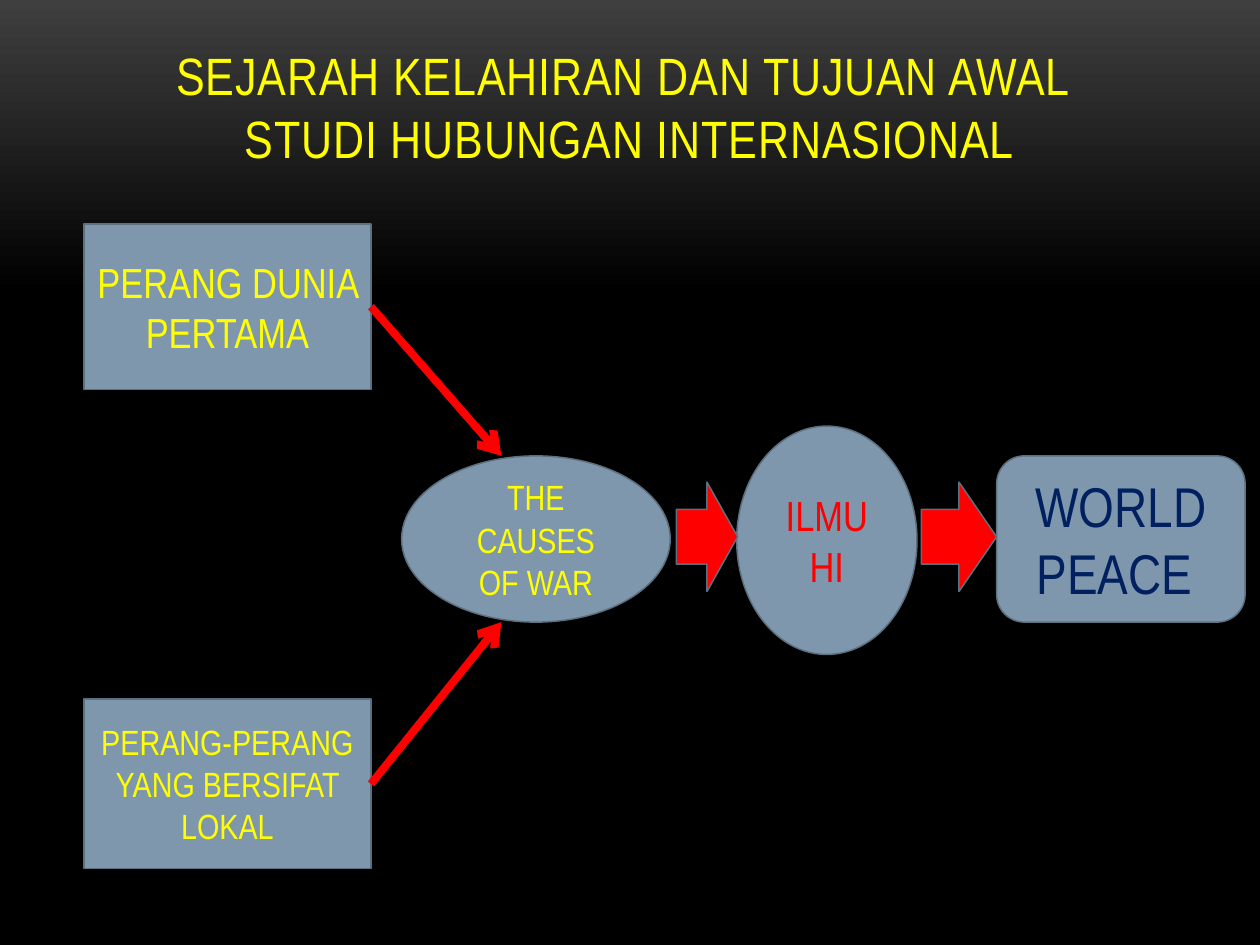
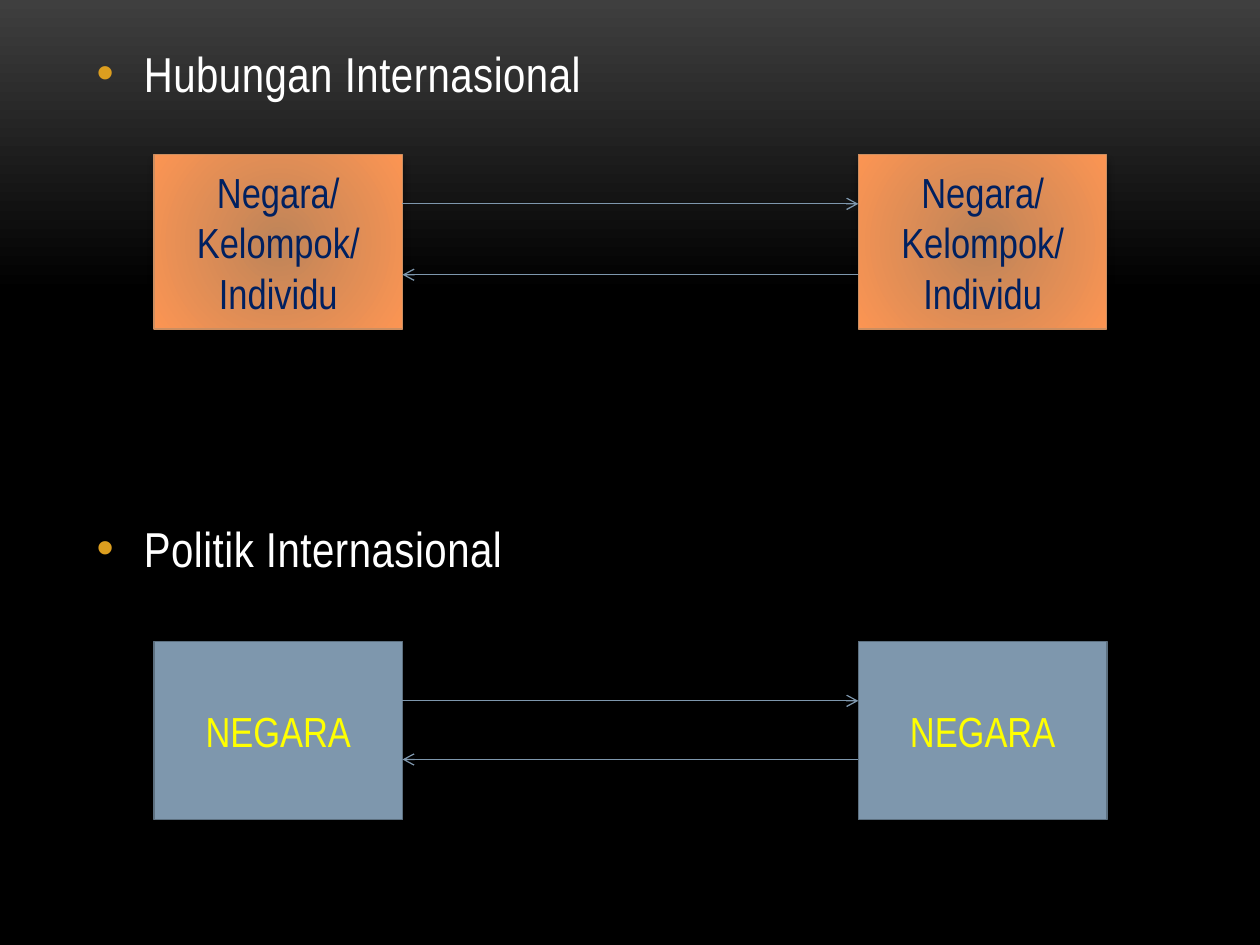
from lxml import etree
from pptx import Presentation
from pptx.dml.color import RGBColor
from pptx.enum import shapes, text
from pptx.oxml import ns
from pptx.util import Pt

FACE = "Arial Narrow"
YELLOW, NAVY, RED, WHITE = "FFFF00", "002060", "FF0000", "FFFFFF"
STEEL, EDGE, GOLD = "7E97AD", "5D7080", "DC9E1F"
KIND = shapes.MSO_SHAPE

TITLE = "SEJARAH KELAHIRAN DAN TUJUAN AWAL \vSTUDI HUBUNGAN INTERNASIONAL"
WARS = [
    ("PERANG DUNIA PERTAMA", 24, (48, 128, 164, 94.5)),
    ("PERANG-PERANG YANG BERSIFAT LOKAL", 20, (48, 399.5, 164, 97)),
]
CAUSE = (229.5, 260.5, 153.5, 95)
STEPS = [
    (KIND.OVAL, "THE CAUSES OF WAR", 20, YELLOW, CAUSE),
    (KIND.ROUNDED_RECTANGLE, "WORLD PEACE ", 32, NAVY, (569.5, 260.5, 142, 95)),
    (KIND.OVAL, "ILMU HI", 24, RED, (421, 243.5, 103, 130.5)),
]
ARROWS = [(386.5, 35), (526.5, 43)]

TOPICS = ["Hubungan Internasional", "Politik Internasional"]
PAIRS = [
    ("Negara/ Kelompok/ Individu", NAVY, 88.5, 99.5, (28, 68.5), True),
    ("NEGARA", YELLOW, 366.5, 102, (34, 67.5), False),
]
LEFT, RIGHT, WIDE = 88, 490.5, 142


def color(code):
    return RGBColor.from_string(code)


def add(node, tag, **attrs):
    child = etree.SubElement(node, ns.qn(tag))
    for key, val in attrs.items():
        child.set(key, str(val))
    return child


def place(shape, box):
    shape.left, shape.top, shape.width, shape.height = map(Pt, box)


def style(par, size, code, gap=None):
    for run in par.runs:
        run.font.name = FACE
        run.font.size = Pt(size)
        run.font.color.rgb = color(code)
        if gap:
            run.font._element.set("spc", str(gap))


def shade(fill, stops, angle=None):
    fill.gradient()
    if angle is not None:
        fill.gradient_angle = angle
    for stop, (spot, code) in zip(fill.gradient_stops, stops):
        stop.position = spot
        stop.color.rgb = color(code)


def block(slide, kind, box, words="", size=24, code=YELLOW, fill=STEEL):
    shape = slide.shapes.add_shape(kind, *map(Pt, box))
    shape.shadow.inherit = False
    shape.fill.solid()
    shape.fill.fore_color.rgb = color(fill)
    shape.line.color.rgb = color(EDGE)
    shape.line.width = Pt(0.85)
    if words:
        frame = shape.text_frame
        frame.text = words
        frame.word_wrap = True
        frame.vertical_anchor = text.MSO_ANCHOR.MIDDLE
        frame.paragraphs[0].alignment = text.PP_ALIGN.CENTER
        style(frame.paragraphs[0], size, code)
    return shape


def glow(shape):
    shade(shape.fill, [(0, "BE8459"), (1, "FC9553")])
    shape.line.color.rgb = color("CC8E60")
    shape.line.width = Pt(0.75)
    props = shape._element.spPr
    grad = props.find(ns.qn("a:gradFill"))
    grad.remove(grad.find(ns.qn("a:lin")))
    ring = add(grad, "a:path", **{"path": "circle"})
    add(ring, "a:fillToRect", l=100000, t=100000, r=100000, b=100000)
    cast = add(props.find(ns.qn("a:effectLst")), "a:outerShdw", blurRad=Pt(4),
               dist=Pt(3.4), dir=5400000, rotWithShape=0)
    add(add(cast, "a:srgbClr", val="000000"), "a:alpha", val=40000)


def link(slide, start, end, code=STEEL, width=0.75):
    line = slide.shapes.add_connector(
        shapes.MSO_CONNECTOR.STRAIGHT, *map(Pt, start + end))
    line.line.color.rgb = color(code)
    line.line.width = Pt(width)
    add(line.line._get_or_add_ln(), "a:tailEnd", type="arrow")
    add(line._element.spPr, "a:effectLst")


def history(deck):
    slide = deck.slides.add_slide(deck.slide_layouts[5])
    title = slide.shapes.title
    place(title, (48, 21.5, 624, 78.5))
    frame = title.text_frame
    frame.text = TITLE
    frame.auto_size = text.MSO_AUTO_SIZE.NONE
    frame.vertical_anchor = text.MSO_ANCHOR.BOTTOM
    frame.paragraphs[0].alignment = text.PP_ALIGN.CENTER
    style(frame.paragraphs[0], 30, YELLOW, 50)

    for words, size, box in WARS:
        block(slide, KIND.RECTANGLE, box, words, size)
    for kind, words, size, code, box in STEPS:
        block(slide, kind, box, words, size, code)
    for x, wide in ARROWS:
        block(slide, KIND.RIGHT_ARROW, (x, 275.5, wide, 62.5), fill=RED)
    ends = CAUSE[1], CAUSE[1] + CAUSE[3]
    for (_, _, (x, y, wide, high)), end in zip(WARS, ends):
        link(slide, (x + wide, y + high / 2), (286.5, end), RED, 4.5)


def compare(deck):
    slide = deck.slides.add_slide(deck.slide_layouts[1])
    title = slide.shapes.title._element
    title.getparent().remove(title)
    body = slide.placeholders[1]
    place(body, (48, 21, 624, 487.5))
    frame = body.text_frame
    frame.text = "\n".join(TOPICS)
    frame.auto_size = text.MSO_AUTO_SIZE.NONE
    for par, gap in zip(frame.paragraphs, (0, 232)):
        par.space_before = Pt(gap)
        par.space_after = Pt(6)
        props = par._p.get_or_add_pPr()
        props.set("marL", str(Pt(27)))
        props.set("indent", str(-Pt(27)))
        add(add(props, "a:buClr"), "a:srgbClr", val=GOLD)
        add(props, "a:buFont", typeface="Arial")
        add(props, "a:buChar", char="•")
        style(par, 28, WHITE, 30)

    for words, code, top, high, steps, warm in PAIRS:
        for x in (LEFT, RIGHT):
            box = block(slide, KIND.RECTANGLE, (x, top, WIDE, high), words, 24, code)
            if warm:
                glow(box)
        out, back = (top + step for step in steps)
        link(slide, (LEFT + WIDE, out), (RIGHT, out))
        link(slide, (RIGHT, back), (LEFT + WIDE, back))


def main():
    deck = Presentation()
    deck.slide_width, deck.slide_height = Pt(720), Pt(540)
    shade(deck.slide_master.background.fill, [(0, "3F3F3F"), (0.31, "000000")], 270)
    history(deck)
    compare(deck)
    deck.save("out.pptx")


if __name__ == "__main__":
    main()
